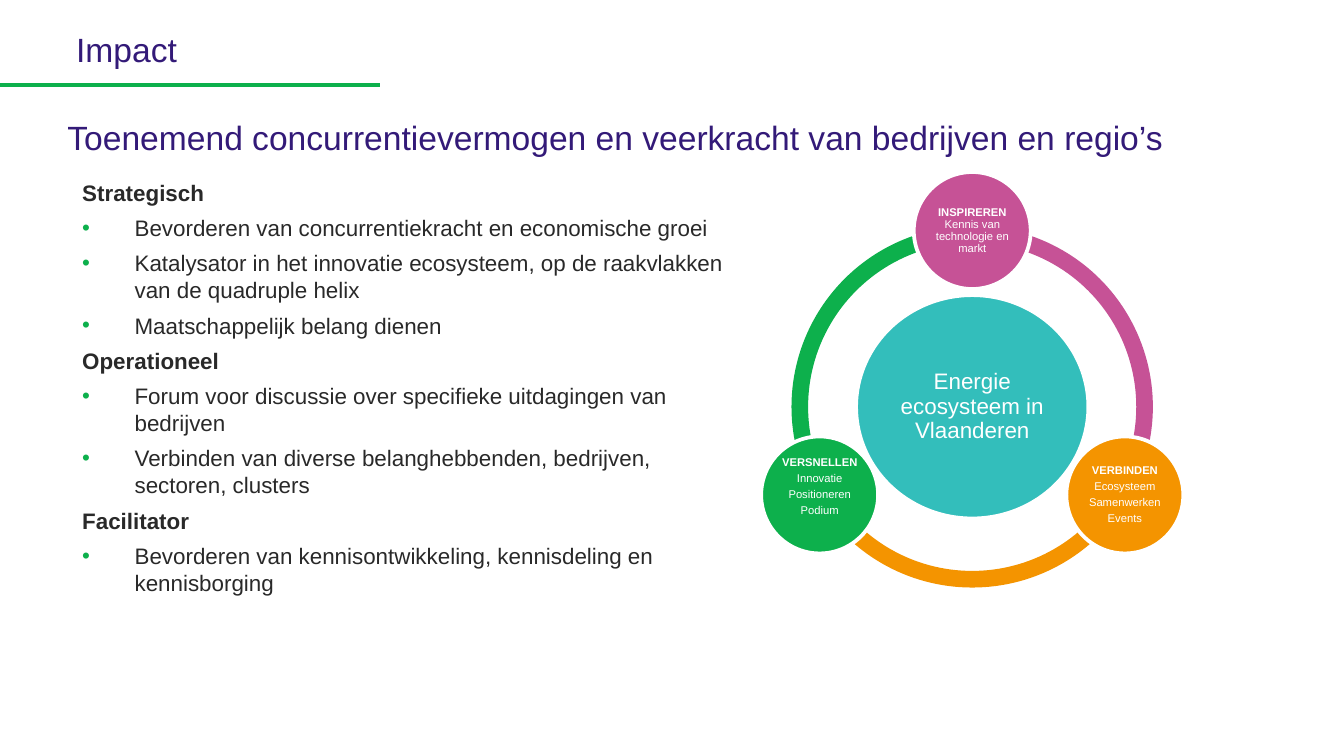
import math

import lxml.etree
import pptx
import pptx.dml.color
import pptx.enum.shapes
import pptx.enum.text
import pptx.oxml.ns
import pptx.util

Cm = pptx.util.Cm
RGB = pptx.dml.color.RGBColor
SHAPE = pptx.enum.shapes.MSO_SHAPE
ALIGN = pptx.enum.text.PP_ALIGN
ANCHOR = pptx.enum.text.MSO_ANCHOR
qn = pptx.oxml.ns.qn

PURPLE = RGB(0x33, 0x1A, 0x78)
DARK = RGB(0x29, 0x29, 0x29)
GREEN = RGB(0x0D, 0xB0, 0x4C)
ORANGE = RGB(0xF4, 0x94, 0x00)
PINK = RGB(0xC6, 0x52, 0x96)
TEAL = RGB(0x33, 0xBE, 0xBB)
WHITE = RGB(0xFF, 0xFF, 0xFF)

GOALS = [
    ("Strategisch", [
        "Bevorderen van concurrentiekracht en economische groei",
        "Katalysator in het innovatie ecosysteem, op de raakvlakken van de quadruple helix",
        "Maatschappelijk belang dienen"]),
    ("Operationeel", [
        "Forum voor discussie over specifieke uitdagingen van bedrijven",
        "Verbinden van diverse belanghebbenden, bedrijven, sectoren, clusters"]),
    ("Facilitator", [
        "Bevorderen van kennisontwikkeling, kennisdeling en kennisborging"]),
]

# angle of the node, colour, start of the arc, lift of the text, paragraphs of (text, bold) runs
NODES = [
    (270, PINK, 270, 0, [[("INSPIREREN", True), (" Kennis van technologie en markt", False)]]),
    (30, ORANGE, 30, 0, [[("VERBINDEN", True)], [("Ecosysteem", False)],
                         [("Samenwerken", False)], [("Events", False)]]),
    (150, GREEN, 150, 0.3, [[("VERSNELLEN", True)], [("Innovatie", False)],
                            [("Positioneren", False)], [("Podium", False)]]),
]


def add_run(p, text, size, color, bold=False):
    r = p.add_run()
    r.text = text
    r.font.name = "Arial"
    r.font.size = pptx.util.Pt(size)
    r.font.bold = bold
    r.font.color.rgb = color


def set_box(sp, left, top, width, height):
    sp.left, sp.top, sp.width, sp.height = Cm(left), Cm(top), Cm(width), Cm(height)


def set_heading(sp, text):
    tf = sp.text_frame
    tf.word_wrap = True
    tf.auto_size = pptx.enum.text.MSO_AUTO_SIZE.NONE
    tf.vertical_anchor = ANCHOR.TOP
    p = tf.paragraphs[0]
    p.alignment = ALIGN.LEFT
    p.line_spacing = 0.9
    add_run(p, text, 18, PURPLE)


def add_header(s, left, top, width, height):
    line = s.shapes.add_connector(
        pptx.enum.shapes.MSO_CONNECTOR.STRAIGHT,
        Cm(left - 3.45), Cm(top + 1.09), Cm(left + 6), Cm(top + 1.09))
    line.line.color.rgb = GREEN
    line.line.width = pptx.util.Pt(2)
    lxml.etree.SubElement(line._element.spPr, qn("a:effectLst"))
    sp = s.shapes.add_textbox(Cm(left), Cm(top), Cm(width), Cm(height))
    set_heading(sp, "Impact")


def add_title(s, left, top, width, height):
    sp = s.shapes.title
    set_box(sp, left, top, width, height)
    set_heading(sp, "Toenemend concurrentievermogen en veerkracht van bedrijven en regio’s")


def set_bullet(p, margin, indent, char=None):
    pPr = p._p.get_or_add_pPr()
    pPr.set("marL", str(Cm(margin)))
    pPr.set("indent", str(Cm(indent)))
    if char is None:
        lxml.etree.SubElement(pPr, qn("a:buNone"))
        return
    color = lxml.etree.SubElement(pPr, qn("a:buClr"))
    lxml.etree.SubElement(color, qn("a:srgbClr"), val=str(GREEN))
    lxml.etree.SubElement(pPr, qn("a:buFont"), typeface="Arial")
    lxml.etree.SubElement(pPr, qn("a:buChar"), char=char)


def add_goals(s, left, top, width, height):
    sp = s.placeholders[1]
    set_box(sp, left, top, width, height)
    tf = sp.text_frame
    tf.word_wrap = True
    tf.auto_size = pptx.enum.text.MSO_AUTO_SIZE.NONE
    lines = [(text, text == head) for head, items in GOALS for text in [head] + items]
    for i, (text, is_head) in enumerate(lines):
        p = tf.add_paragraph() if i else tf.paragraphs[0]
        p.space_before = pptx.util.Pt(4.5 if i else 0)
        if is_head:
            set_bullet(p, 0.28, 0)
        else:
            set_bullet(p, 1.27, -0.99, "•")
        add_run(p, text, 12, DARK, is_head)


def add_centred(group, kind, x, y, width, height, color):
    sp = group.shapes.add_shape(
        kind, Cm(x - width / 2), Cm(y - height / 2), Cm(width), Cm(height))
    sp.shadow.inherit = False
    sp.fill.solid()
    sp.fill.fore_color.rgb = color
    sp.line.fill.background()
    return sp


def add_disc(group, x, y, width, height, color, share, inset, lift, size, paragraphs):
    sp = add_centred(group, SHAPE.OVAL, x, y, width, height, color)
    sp.line.color.rgb = WHITE
    sp.line.width = pptx.util.Pt(2)
    w, h = width * share, height * share
    tb = group.shapes.add_textbox(Cm(x - w / 2), Cm(y - h / 2), Cm(w), Cm(h))
    tf = tb.text_frame
    tf.word_wrap = True
    tf.vertical_anchor = ANCHOR.MIDDLE
    tf.margin_left = tf.margin_right = tf.margin_top = Cm(inset)
    tf.margin_bottom = Cm(inset + lift)
    for i, runs in enumerate(paragraphs):
        p = tf.add_paragraph() if i else tf.paragraphs[0]
        p.alignment = ALIGN.CENTER
        p.line_spacing = 0.9
        p.space_after = pptx.util.Pt(size * 0.35)
        for text, bold in runs:
            add_run(p, text, size, WHITE, bold)


def add_wheel(s, left, top, size):
    group = s.shapes.add_group_shape()
    x, y = left + size / 2, top + size / 2
    for _, color, start, _, _ in reversed(NODES):
        arc = add_centred(group, SHAPE.BLOCK_ARC, x, y, size, size, color)
        arc.adjustments[0] = start * 0.6
        arc.adjustments[1] = (start + 120) % 360 * 0.6
        arc.adjustments[2] = 0.046
    add_disc(group, x, y, 4.39, 4.22, TEAL, 0.71, 0.05, 0, 12,
             [[("Energie ecosysteem in Vlaanderen", False)]])
    radius = 3.33
    for angle, color, _, lift, paragraphs in NODES:
        a = math.radians(angle)
        add_disc(group, x + radius * math.cos(a), y + radius * math.sin(a),
                 2.21, 2.21, color, 0.7, 0.03, lift, 6, paragraphs)


def main():
    prs = pptx.Presentation()
    prs.slide_width, prs.slide_height = Cm(25.4), Cm(14.28)
    s = prs.slides.add_slide(prs.slide_layouts[1])
    add_header(s, 1.19, 0.51, 11.25, 1.9)
    add_title(s, 1.02, 2.16, 23.37, 0.94)
    add_goals(s, 1.02, 3.25, 13.39, 9.7)
    add_wheel(s, 14.96, 4.27, 6.83)
    prs.save("out.pptx")


if __name__ == "__main__":
    main()
